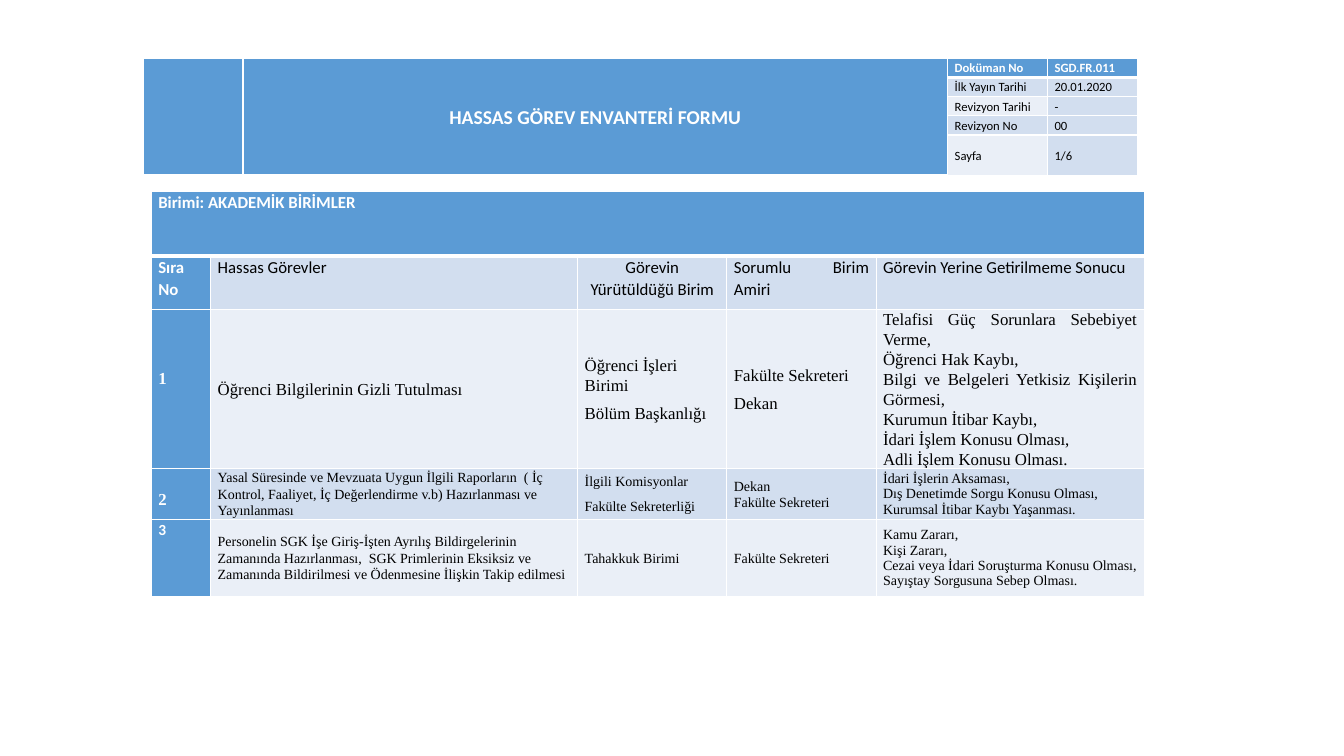
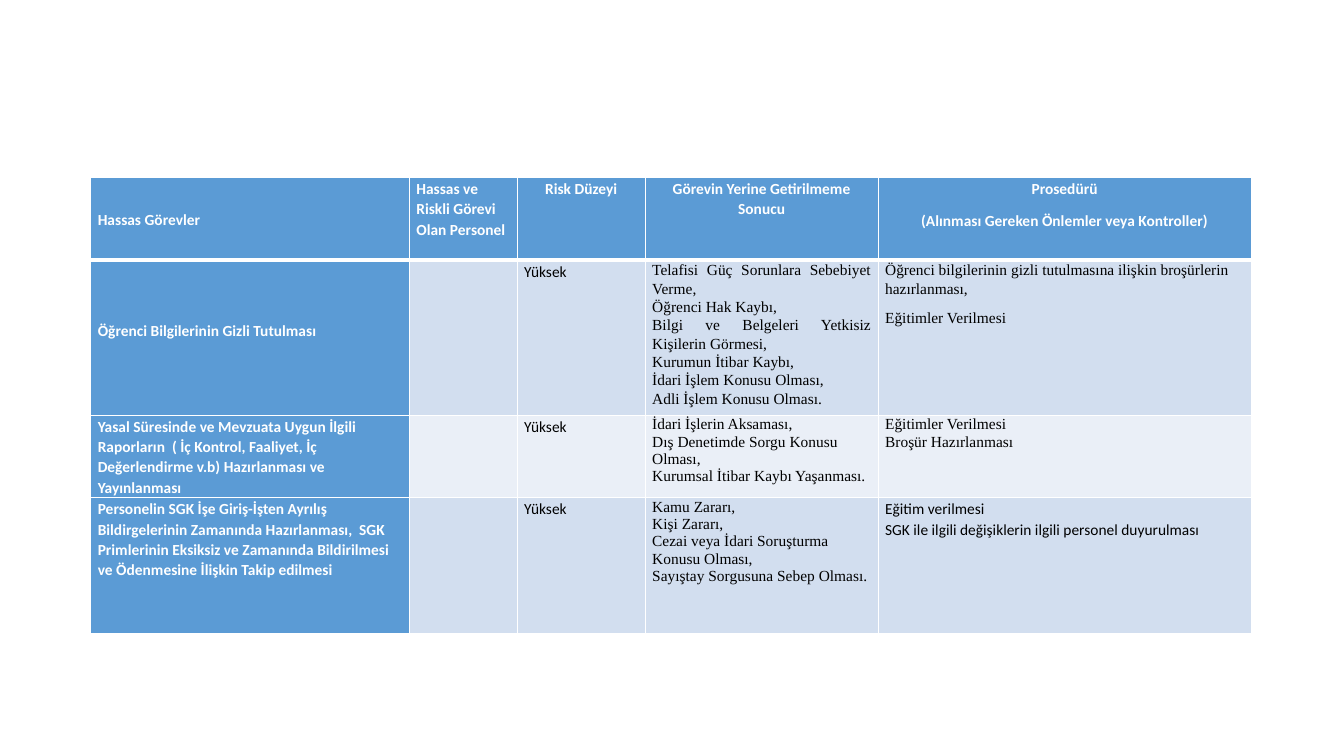
import pptx
import pptx.dml.color
import pptx.enum.text
import pptx.oxml
import pptx.oxml.ns
import pptx.util

Inches = pptx.util.Inches
COLORS = {"accent": "5B9BD5", "band": "D2DEEF", "pale": "EAEFF7", "white": "FFFFFF", "black": "000000"}
SERIF = "Times New Roman"
ALIGN = {
    "left": pptx.enum.text.PP_ALIGN.LEFT,
    "center": pptx.enum.text.PP_ALIGN.CENTER,
    "justify": pptx.enum.text.PP_ALIGN.JUSTIFY,
}
ANCHOR = {"top": pptx.enum.text.MSO_ANCHOR.TOP, "middle": pptx.enum.text.MSO_ANCHOR.MIDDLE}

TASKS = [
    "Öğrenci Bilgilerinin Gizli Tutulması",
    "Yasal Süresinde ve Mevzuata Uygun İlgili Raporların  ( İç Kontrol, Faaliyet, İç Değerlendirme v.b) "
    "Hazırlanması ve Yayınlanması",
    "Personelin SGK İşe Giriş-İşten Ayrılış Bildirgelerinin Zamanında Hazırlanması,  SGK Primlerinin "
    "Eksiksiz ve Zamanında Bildirilmesi ve Ödenmesine İlişkin Takip edilmesi",
]
RESULTS = [
    ["Telafisi Güç Sorunlara Sebebiyet Verme,", "Öğrenci Hak Kaybı,",
     "Bilgi ve Belgeleri Yetkisiz Kişilerin Görmesi,", "Kurumun İtibar Kaybı,",
     "İdari İşlem Konusu Olması,", "Adli İşlem Konusu Olması."],
    ["İdari İşlerin Aksaması,", "Dış Denetimde Sorgu Konusu Olması,", "Kurumsal İtibar Kaybı Yaşanması."],
    ["Kamu Zararı,", "Kişi Zararı,", "Cezai veya İdari Soruşturma Konusu Olması,",
     "Sayıştay Sorgusuna Sebep Olması."],
]
RESULT_STYLES = [{"align": "justify"}, {"spacing": 1.0}, {"spacing": 1.0}]


def set_text(cell, lines, color="black", bold=False, size=11, font="Calibri", align="left",
             anchor="top", spacing=1.07, after=0, inset=0.0):
    """Write one paragraph per line into a table cell."""
    cell.margin_left = cell.margin_right = Inches(0.07)
    cell.margin_top, cell.margin_bottom = Inches(inset), 0
    cell.vertical_anchor = ANCHOR[anchor]
    tf = cell.text_frame
    for i, line in enumerate([lines] if isinstance(lines, str) else lines):
        p = tf.add_paragraph() if i else tf.paragraphs[0]
        p.alignment = ALIGN[align]
        p.line_spacing = spacing
        p.space_after = pptx.util.Pt(after)
        r = p.add_run()
        r.text = line
        r.font.size = pptx.util.Pt(size)
        r.font.name = font
        r.font.bold = bold
        r.font.color.rgb = pptx.dml.color.RGBColor.from_string(COLORS[color])


def set_borders(cell, top, bottom):
    """Draw white borders of the given top and bottom weights."""
    tc_pr = cell._tc.get_or_add_tcPr()
    for side, weight in (("L", 1), ("R", 1), ("T", top), ("B", bottom)):
        tc_pr.append(pptx.oxml.parse_xml(
            f'<a:ln{side} {pptx.oxml.ns.nsdecls("a")} w="{pptx.util.Pt(weight)}"><a:solidFill>'
            f'<a:srgbClr val="{COLORS["white"]}"/></a:solidFill></a:ln{side}>'))


def add_grid(slide, left, top, widths, heights, rows, accent_cols=(0,), flat_cols=(), **style):
    """Add a banded table whose rows hold (lines, format) pairs."""
    table = slide.shapes.add_table(len(heights), len(widths), Inches(left), Inches(top),
                                   Inches(sum(widths)), Inches(sum(heights))).table
    table.first_row = table.horz_banding = False
    for column, width in zip(table.columns, widths):
        column.width = Inches(width)
    for y, (height, row) in enumerate(zip(heights, rows)):
        table.rows[y].height = Inches(height)
        for x in range(len(widths)):
            cell = table.cell(y, x)
            accent = y == 0 or x in accent_cols
            set_borders(cell, 3 if y == 1 else 1, 3 if y == 0 else 1)
            fill = "accent" if accent else "band" if y % 2 or x in flat_cols else "pale"
            cell.fill.solid()
            cell.fill.fore_color.rgb = pptx.dml.color.RGBColor.from_string(COLORS[fill])
            lines, own = row[x] if x < len(row) else ("", {})
            if lines:
                colors = {"color": "white" if accent else "black", "bold": accent}
                set_text(cell, lines, **{**colors, **style, **own})
    return table


def add_form_header(slide, left, top):
    """Add the form title with its document details."""
    details = [("Doküman No", "SGD.FR.011"), ("İlk Yayın Tarihi", "20.01.2020"),
               ("Revizyon Tarihi", "-"), ("Revizyon No", "00"), ("Sayfa", "1/6")]
    rows = [[("", {}), ("", {}), (label, {}), (value, {})] for label, value in details]
    rows[0][1] = ("HASSAS GÖREV ENVANTERİ FORMU", {"size": 14, "align": "center"})
    table = add_grid(slide, left, top, [0.99, 6.99, 0.99, 0.89], [0.19] * 4 + [0.25], rows,
                     accent_cols=(0, 1), flat_cols=(3,), size=9, anchor="middle")
    for x in (0, 1):
        table.cell(0, x).merge(table.cell(4, x))


def add_task_table(slide, left, top):
    """Add the sensitive tasks with their units and managers."""
    units = [["Öğrenci İşleri Birimi", "Bölüm Başkanlığı"],
             ["İlgili Komisyonlar", "Fakülte Sekreterliği"], ["Tahakkuk Birimi"]]
    managers = [["Fakülte Sekreteri", "Dekan"], ["Dekan", "Fakülte Sekreteri"], ["Fakülte Sekreteri"]]
    numbers = [{"inset": 0.58, "font": SERIF}, {"inset": 0.2, "font": SERIF}, {"size": 11}]
    justify = {"align": "justify"}
    rows = [
        [("Birimi: AKADEMİK BİRİMLER", {})],
        [("Sıra No", {}), ("Hassas Görevler", justify),
         ("Görevin Yürütüldüğü Birim", {"align": "center"}), ("Sorumlu Birim Amiri", justify),
         ("Görevin Yerine Getirilmeme Sonucu", justify)],
    ]
    for i, task in enumerate(TASKS):
        body = {"size": 10 if i else 12, "font": SERIF, "anchor": "middle"}
        spaced = {**body, "after": 6}
        rows.append([(str(i + 1), numbers[i]), (task, spaced), (units[i], spaced),
                     (managers[i], body if i == 1 else spaced),
                     (RESULTS[i], {**body, **RESULT_STYLES[i]})])
    table = add_grid(slide, left, top, [0.59, 3.64, 1.48, 1.48, 2.66],
                     [0.64, 0.53, 1.57, 0.5, 0.77], rows, size=12)
    table.cell(0, 0).merge(table.cell(0, 4))


def add_risk_table(slide, left, top):
    """Add the risk level, consequence and procedure of each task."""
    spaced = {"after": 8}
    centered = {"after": 8, "align": "center"}
    procedures = [
        (["Öğrenci bilgilerinin gizli tutulmasına ilişkin broşürlerin hazırlanması,",
          "Eğitimler Verilmesi"], {"font": SERIF, "after": 8}),
        (["Eğitimler Verilmesi", "Broşür Hazırlanması"], {"font": SERIF, "spacing": 1.0}),
        (["Eğitim verilmesi", "SGK ile ilgili değişiklerin ilgili personel duyurulması"], {}),
    ]
    rows = [[("Hassas Görevler", {"inset": 0.32}), ("Hassas ve Riskli Görevi Olan Personel", spaced),
             ("Risk Düzeyi", centered), ("Görevin Yerine Getirilmeme Sonucu", centered),
             (["Prosedürü", "(Alınması Gereken Önlemler veya Kontroller)"], centered)]]
    for i, task in enumerate(TASKS):
        rows.append([(task, {} if i else {"inset": 0.6}), ("", {}), ("Yüksek", {}),
                     (RESULTS[i], {"font": SERIF, **RESULT_STYLES[i]}), procedures[i]])
    add_grid(slide, left, top, [3.16, 1.07, 1.27, 2.31, 3.7], [0.82, 1.54, 0.82, 1.35], rows, inset=0.01)


def main():
    """Build and save the presentation."""
    prs = pptx.Presentation()
    prs.slide_width, prs.slide_height = Inches(13.33), Inches(7.5)
    blank = prs.slide_layouts[6]
    inventory = prs.slides.add_slide(blank)
    add_form_header(inventory, 1.42, 0.58)
    add_task_table(inventory, 1.5, 1.9)
    add_risk_table(prs.slides.add_slide(blank), 0.9, 1.76)
    prs.save("out.pptx")


if __name__ == "__main__":
    main()
